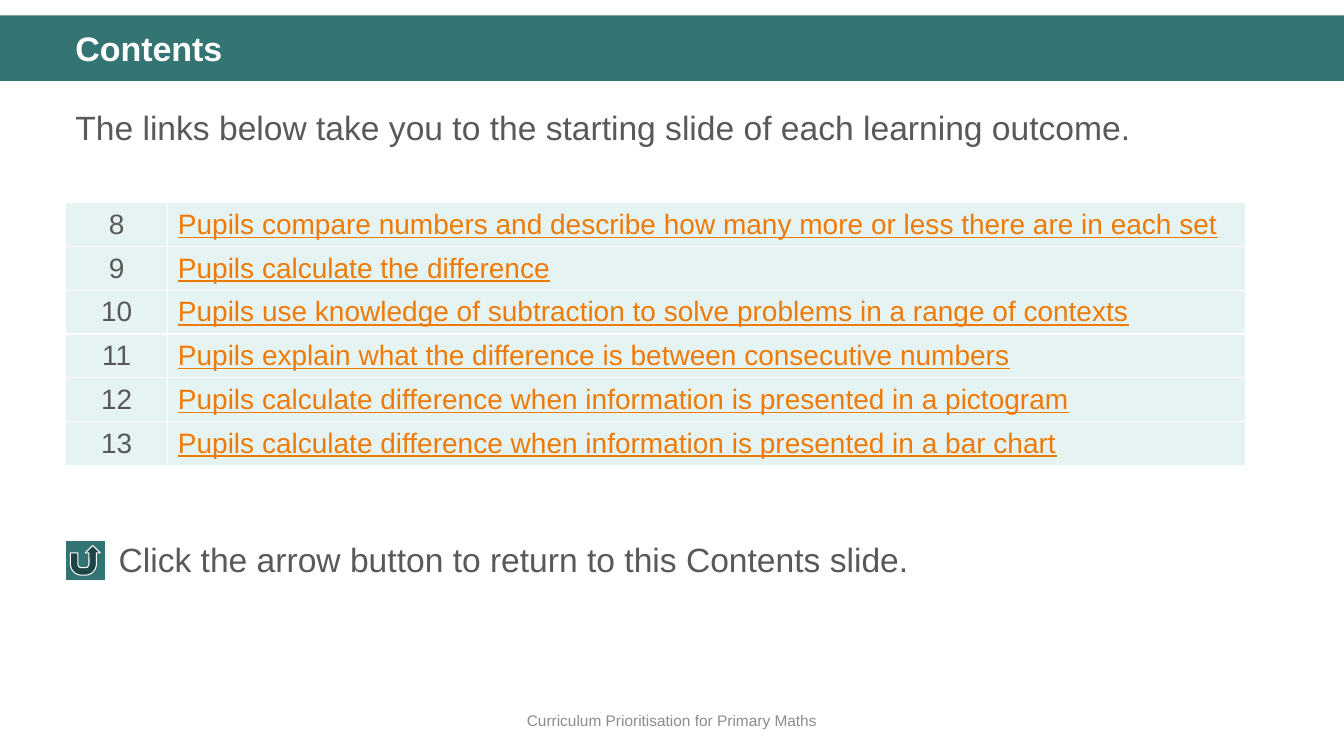
from pptx import Presentation
from pptx.dml.color import RGBColor
from pptx.enum import shapes, text
from pptx.util import Cm, Pt

TEAL, GREY, LINK = "347574", "595959", "EE7B08"
TOPICS = [
    "Pupils compare numbers and describe how many more or less there are in each set",
    "Pupils calculate the difference",
    "Pupils use knowledge of subtraction to solve problems in a range of contexts",
    "Pupils explain what the difference is between consecutive numbers",
    "Pupils calculate difference when information is presented in a pictogram",
    "Pupils calculate difference when information is presented in a bar chart",
]


def paint(target, color):
    """Give a fill or a font a solid colour."""
    if hasattr(target, "solid"):
        target.solid()
        target.fore_color.rgb = RGBColor.from_string(color)
    else:
        target.color.rgb = RGBColor.from_string(color)


def write(frame, words, size, color, bold=False, line=False, align=text.PP_ALIGN.LEFT):
    """Put one styled paragraph in a text frame and return it."""
    para = frame.paragraphs[0]
    para.text = words
    para.alignment = align
    font = para.font
    font.name, font.size, font.bold, font.underline = "Arial", Pt(size), bold, line
    paint(font, color)
    return para


def label(slide, box, words, size, color, **style):
    """Add a wrapping text box and return its frame and paragraph."""
    frame = slide.shapes.add_textbox(*map(Cm, box)).text_frame
    frame.word_wrap = True
    return frame, write(frame, words, size, color, **style)


def block(slide, kind, box, color, edge=None):
    """Add a flat filled shape with an optional thin edge."""
    shape = slide.shapes.add_shape(kind, *map(Cm, box))
    shape.shadow.inherit = False
    paint(shape.fill, color)
    if edge:
        paint(shape.line.fill, edge)
        shape.line.width = Pt(0.75)
    else:
        shape.line.fill.background()


def index(slide, topics, first):
    """Add the table of numbered topics."""
    count = len(topics)
    table = slide.shapes.add_table(count, 2, Cm(1.65), Cm(5.11), Cm(29.75), Cm(6.25)).table
    table.horz_banding = False
    table.columns[0].width, table.columns[1].width = Cm(2.58), Cm(27.17)
    for row, topic in enumerate(topics):
        num, name = table.cell(row, 0), table.cell(row, 1)
        for cell in (num, name):
            paint(cell.fill, "E5F3F2")
            cell.vertical_anchor = text.MSO_ANCHOR.MIDDLE
        write(num.text_frame, str(first + row), 20, GREY, align=text.PP_ALIGN.CENTER)
        write(name.text_frame, topic, 20, LINK, line=True)


def main():
    """Build and save the contents slide."""
    deck = Presentation()
    deck.slide_width, deck.slide_height = Cm(33.87), Cm(19.05)
    slide = deck.slides.add_slide(deck.slide_layouts[6])
    kinds = shapes.MSO_SHAPE
    block(slide, kinds.RECTANGLE, (0, 0.39, 33.87, 1.65), TEAL)
    foot, _ = label(slide, (0, 17.65, 33.87, 1.02), "Curriculum Prioritisation for Primary Maths",
                    11, "8C8C8C", align=text.PP_ALIGN.CENTER)
    foot.vertical_anchor = text.MSO_ANCHOR.MIDDLE
    _, intro = label(slide, (1.65, 2.36, 30.94, 8.92),
                     "The links below take you to the starting slide of each learning outcome.", 24, GREY)
    intro.line_spacing, intro.space_before = 1.2, Pt(10)
    index(slide, TOPICS, 8)
    block(slide, kinds.ACTION_BUTTON_RETURN, (1.65, 13.62, 1, 1), "327473", "FFFFFF")
    label(slide, (2.74, 13.46, 28.75, 1.28),
          "Click the arrow button to return to this Contents slide.", 24, GREY)
    _, title = label(slide, (1.65, 0.69, 30.94, 1.19), "Contents", 24.3, "FFFFFF", bold=True)
    title.line_spacing = 0.9
    deck.save("out.pptx")


if __name__ == "__main__":
    main()
